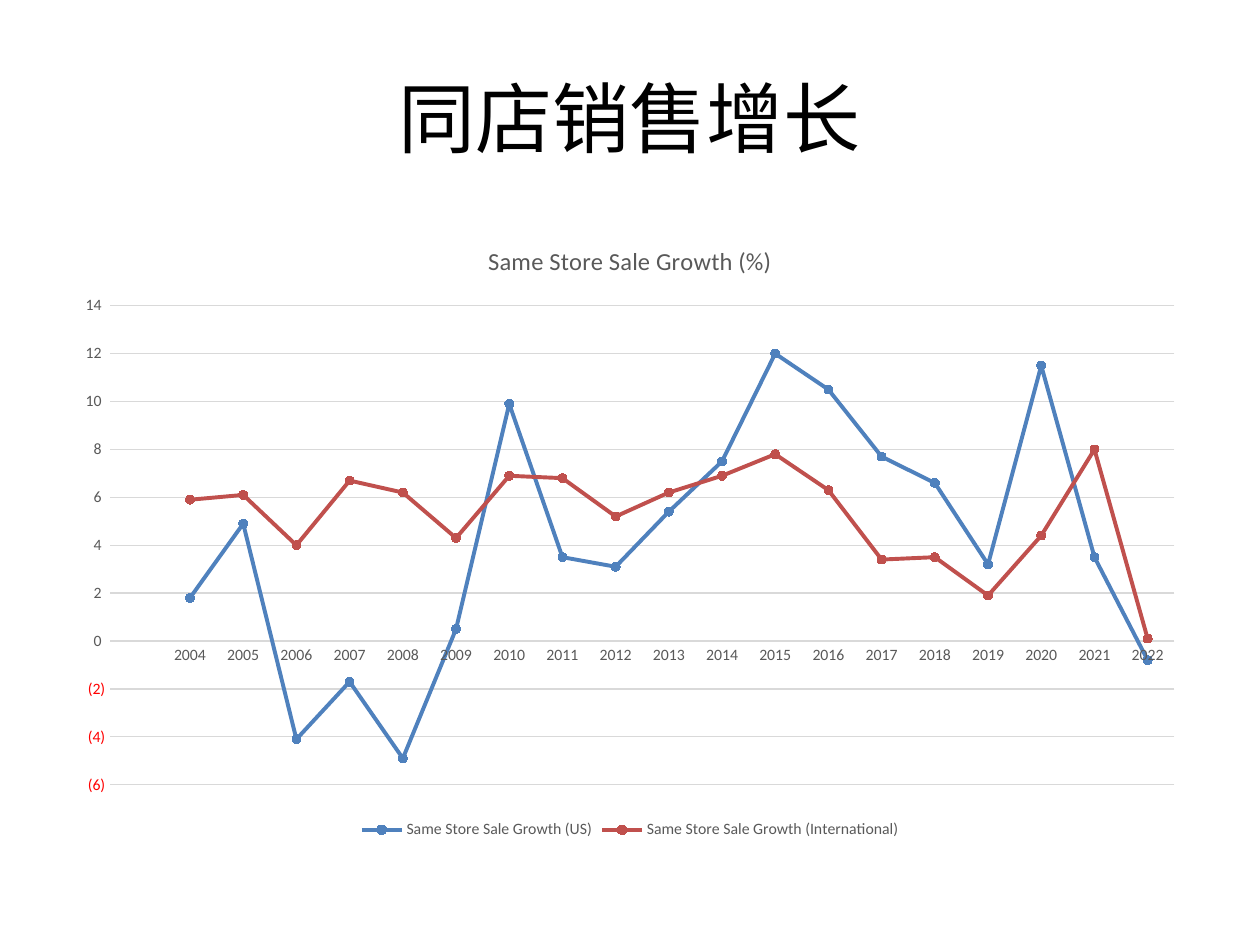
from pptx import Presentation
from pptx.chart.data import CategoryChartData
from pptx.dml.color import RGBColor
from pptx.enum.chart import (XL_CHART_TYPE, XL_LEGEND_POSITION,
                             XL_MARKER_STYLE, XL_TICK_MARK)
from pptx.enum.text import MSO_ANCHOR, PP_ALIGN
from pptx.util import Emu, Pt

SCALE = 914400 / 126
FACE, GREY, RULE = "Calibri", "595959", "D9D9D9"
YEARS = [""] + [str(year) for year in range(2004, 2023)]
SERIES = [
    ("Same Store Sale Growth (US)", "4F81BD",
     [None, 1.8, 4.9, -4.1, -1.7, -4.9, 0.5, 9.9, 3.5, 3.1, 5.4, 7.5, 12,
      10.5, 7.7, 6.6, 3.2, 11.5, 3.5, -0.8]),
    ("Same Store Sale Growth (International)", "C0504D",
     [None, 5.9, 6.1, 4, 6.7, 6.2, 4.3, 6.9, 6.8, 5.2, 6.2, 6.9, 7.8,
      6.3, 3.4, 3.5, 1.9, 4.4, 8, 0.1]),
]


def px(count):
    """Turn whole pixels into EMU."""
    return Emu(round(count * SCALE))


def rgb(code):
    """Turn a hex string into a colour."""
    return RGBColor.from_string(code)


def put(item, values):
    """Set each attribute named in a dict."""
    for name, value in values.items():
        setattr(item, name, value)


def style(font, size, code):
    """Format a font."""
    put(font, {"name": FACE, "size": Pt(size), "bold": False})
    font.color.rgb = rgb(code)


def stroke(line, width, code):
    """Format a line."""
    line.width = Pt(width)
    line.color.rgb = rgb(code)


def add_title(slide, text):
    """Fill and place the title."""
    title = slide.shapes.title
    put(title, {"left": px(63), "top": px(38),
                "width": px(1134), "height": px(157)})
    frame = title.text_frame
    put(frame, {"text": text, "vertical_anchor": MSO_ANCHOR.MIDDLE})
    para = frame.paragraphs[0]
    para.alignment = PP_ALIGN.CENTER
    style(para.runs[0].font, 44, "000000")


def set_axes(chart):
    """Format both axes and the grid."""
    years, rates = chart.category_axis, chart.value_axis
    for axis in (years, rates):
        put(axis, {"major_tick_mark": XL_TICK_MARK.NONE,
                   "minor_tick_mark": XL_TICK_MARK.NONE})
        style(axis.tick_labels.font, 9, GREY)
    stroke(years.format.line, 0.75, RULE)
    put(rates, {"minimum_scale": -6, "maximum_scale": 14, "major_unit": 2,
                "has_major_gridlines": True})
    stroke(rates.major_gridlines.format.line, 0.75, RULE)
    rates.format.line.fill.background()
    put(rates.tick_labels, {"number_format": r"#,##0_);[Red]\(#,##0\)",
                            "number_format_is_linked": False})


def set_series(series, code):
    """Format one line and its markers."""
    series.smooth = False
    stroke(series.format.line, 2.25, code)
    mark = series.marker
    put(mark, {"style": XL_MARKER_STYLE.CIRCLE, "size": 5})
    mark.format.fill.solid()
    mark.format.fill.fore_color.rgb = rgb(code)
    stroke(mark.format.line, 0.75, code)


def add_lines(slide, head):
    """Add the line chart with its title and legend."""
    data = CategoryChartData()
    data.categories = YEARS
    for name, code, values in SERIES:
        data.add_series(name, values)
    chart = slide.shapes.add_chart(
        XL_CHART_TYPE.LINE_MARKERS, px(63), px(220), px(1134), px(624),
        data).chart
    style(chart.font, 10, "000000")
    put(chart, {"has_title": True, "has_legend": True})
    frame = chart.chart_title.text_frame
    frame.text = head
    style(frame.paragraphs[0].runs[0].font, 14, GREY)
    chart.chart_title.include_in_layout = False
    put(chart.legend, {"position": XL_LEGEND_POSITION.BOTTOM,
                       "include_in_layout": False})
    style(chart.legend.font, 9, GREY)
    set_axes(chart)
    plot = chart.plots[0]
    plot.vary_by_categories = False
    for series, (name, code, values) in zip(plot.series, SERIES):
        set_series(series, code)


def main():
    """Build the slide and save it."""
    deck = Presentation()
    put(deck, {"slide_width": px(1260), "slide_height": px(945)})
    slide = deck.slides.add_slide(deck.slide_layouts[5])
    add_title(slide, "同店销售增长")
    add_lines(slide, "Same Store Sale Growth (%)")
    deck.save("out.pptx")


if __name__ == "__main__":
    main()
